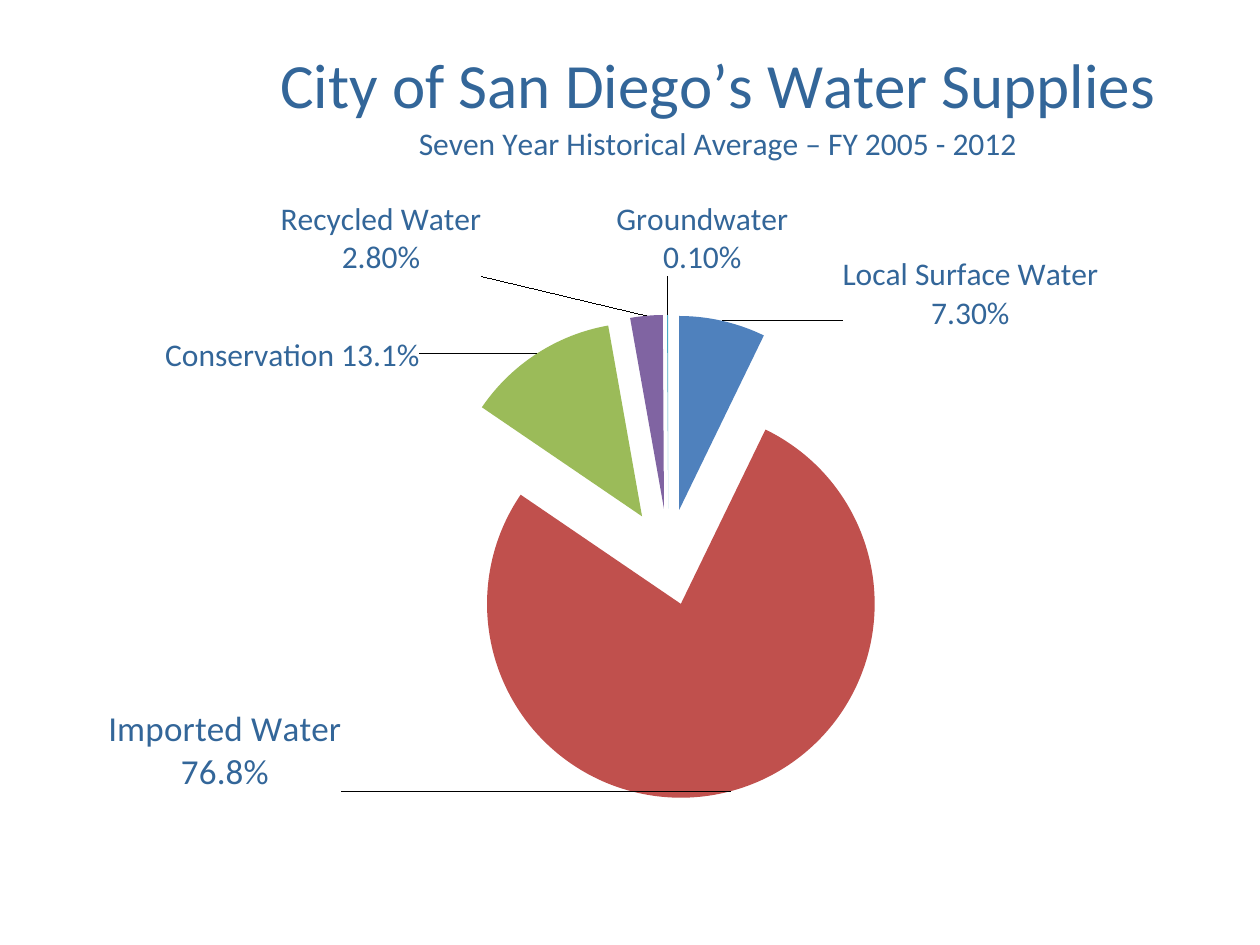
from lxml import etree
from pptx import Presentation, util as u
from pptx.chart.data import CategoryChartData
from pptx.dml.color import RGBColor
from pptx.enum import chart as ch
from pptx.oxml.ns import qn

PX = 914400 // 126
FONT = "Calibri"
COLORS = {
    "text": "336699",
    "Local Surface Water": "4F81BD",
    "Imported Water": "C0504D",
    "Conservation": "9BBB59",
    "Recycled Water": "8064A2",
    "Groundwater": "4BACC6",
}
SUPPLIES = [
    ("Local Surface Water", 0.072, ["Local Surface Water", "7.30%"], 18, (118, 18)),
    ("Imported Water", 0.774, ["Imported Water", "76.8%"], 20, (-625, -91)),
    ("Conservation", 0.127, ["Conservation 13.1%"], 18, (-113, 27)),
    ("Recycled Water", 0.027, ["Recycled Water", "2.80%"], 18, (-165, -32)),
    ("Groundwater", 0.001, ["Groundwater", "0.10%"], 18, (35, -31)),
]
TITLE = ["City of San Diego’s Water Supplies",
         "Seven Year Historical Average – FY 2005 - 2012"]


def rgb(name):
    """Return the named colour."""
    return RGBColor.from_string(COLORS[name])


def set_font(font, size):
    """Apply the chart's text style."""
    font.name, font.size, font.bold = FONT, u.Pt(size), False
    font.color.rgb = rgb("text")


def set_lines(tf, lines, sizes):
    """Fill a text frame with one formatted paragraph per line."""
    tf.text = lines[0]
    for line in lines[1:]:
        tf.add_paragraph().text = line
    for p, size in zip(tf.paragraphs, sizes):
        set_font(p.runs[0].font, size)


def set_layout(parent, index, **values):
    """Give a chart part a manual layout."""
    for old in parent.findall(qn("c:layout")):
        parent.remove(old)
    layout = etree.Element(qn("c:layout"))
    manual = etree.SubElement(layout, qn("c:manualLayout"))
    for tag, value in values.items():
        etree.SubElement(manual, qn(f"c:{tag}")).set("val", str(value))
    parent.insert(index, layout)


def add_labels(series, width, height):
    """Label every slice at its offset from the default place."""
    labels = series.data_labels
    labels.show_value = labels.show_category_name = True
    labels.number_format, labels.number_format_is_linked = "0.00%", False
    labels.position = ch.XL_LABEL_POSITION.OUTSIDE_END
    set_font(labels.font, 18)
    for i, (_, _, lines, size, _) in enumerate(SUPPLIES):
        label = series.points[i].data_label
        set_lines(label.text_frame, lines, [size] * len(lines))
        label.position = ch.XL_LABEL_POSITION.OUTSIDE_END
    for element, (*_, (dx, dy)) in zip(series._element.iter(qn("c:dLbl")), SUPPLIES):
        set_layout(element, 1, x=round(dx / width, 3), y=round(dy / height, 3))


def add_supply_chart(s, x, y, w, h):
    """Draw the exploded pie of water supplies in the given box."""
    data = CategoryChartData(number_format="0.00%")
    data.categories = [row[0] for row in SUPPLIES]
    data.add_series("Series 1", [row[1] for row in SUPPLIES])
    box = [n * PX for n in (x, y, w, h)]
    chart = s.shapes.add_chart(ch.XL_CHART_TYPE.PIE, *box, data).chart
    chart.has_legend = False
    chart.font.name, chart.font.size = FONT, u.Pt(10)

    chart.has_title = True
    set_lines(chart.chart_title.text_frame, TITLE, [36, 18])
    set_layout(chart.chart_title._element, 1, xMode="edge", yMode="edge",
               x=0.195, y=0.024)

    plot = chart.plots[0]
    plot.vary_by_categories = True
    set_layout(plot._element.getparent(), 0, layoutTarget="inner", xMode="edge",
               yMode="edge", x=0.093, y=0.339, w=0.814, h=0.559)
    series = plot.series[0]
    for i, (name, *_) in enumerate(SUPPLIES):
        fill = series.points[i].format.fill
        fill.solid()
        fill.fore_color.rgb = rgb(name)
    explosion = etree.Element(qn("c:explosion"))
    explosion.set("val", "25")
    series._element.find(qn("c:dPt")).addprevious(explosion)
    add_labels(series, w, h)


def main():
    """Build and save the slide."""
    prs = Presentation()
    prs.slide_width, prs.slide_height = u.Inches(10), u.Inches(7.5)
    s = prs.slides.add_slide(prs.slide_layouts[6])
    add_supply_chart(s, 26, 21, 1285, 867)
    prs.save("out.pptx")


if __name__ == "__main__":
    main()
